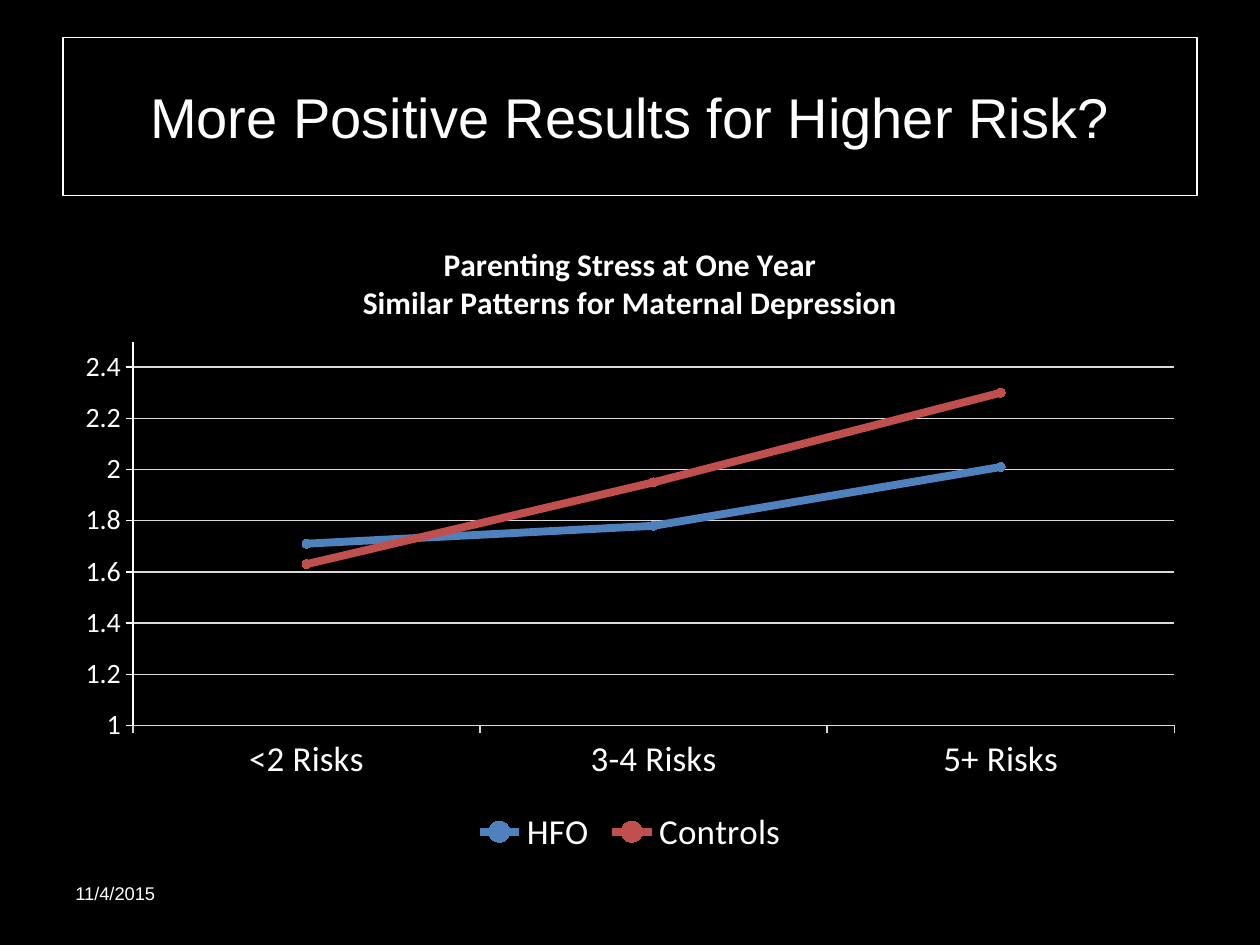
from pptx import Presentation
from pptx.chart.data import CategoryChartData
from pptx.dml.color import RGBColor
from pptx.enum.chart import XL_CHART_TYPE, XL_LEGEND_POSITION, XL_MARKER_STYLE, XL_TICK_MARK
from pptx.enum.text import MSO_ANCHOR, PP_ALIGN
from pptx.util import Inches, Pt

BLACK = RGBColor(0x00, 0x00, 0x00)
WHITE = RGBColor(0xFF, 0xFF, 0xFF)
GRAY = RGBColor(0xD9, 0xD9, 0xD9)
BLUE = RGBColor(0x4F, 0x81, 0xBD)
RED = RGBColor(0xC0, 0x50, 0x4D)


def format_font(font, size, name="Calibri", bold=False):
    font.name = name
    font.size = Pt(size)
    font.bold = bold
    font.color.rgb = WHITE


presentation = Presentation()
presentation.slide_width = Inches(10)
presentation.slide_height = Inches(7.5)
slide = presentation.slides.add_slide(presentation.slide_layouts[5])
slide.background.fill.solid()
slide.background.fill.fore_color.rgb = BLACK

title = slide.shapes.title
title.left, title.top = Inches(0.5), Inches(0.3)
title.width, title.height = Inches(9), Inches(1.25)
title.line.color.rgb = WHITE
title.line.width = Pt(0.75)
title.text_frame.text = "More Positive Results for Higher Risk?"
title.text_frame.vertical_anchor = MSO_ANCHOR.MIDDLE
title_paragraph = title.text_frame.paragraphs[0]
title_paragraph.alignment = PP_ALIGN.CENTER
format_font(title_paragraph.runs[0].font, 32, name="Arial")

chart_data = CategoryChartData()
chart_data.categories = ["<2 Risks", "3-4 Risks", "5+ Risks"]
chart_data.add_series("HFO", [1.71, 1.78, 2.01])
chart_data.add_series("Controls", [1.63, 1.95, 2.3])
chart = slide.shapes.add_chart(
    XL_CHART_TYPE.LINE_MARKERS,
    Inches(0.5), Inches(1.75), Inches(9), Inches(5.08),
    chart_data,
).chart
format_font(chart.font, 10)

chart_title = chart.chart_title.text_frame
chart_title.text = "Parenting Stress at One Year\nSimilar Patterns for Maternal Depression"
for paragraph in chart_title.paragraphs:
    format_font(paragraph.runs[0].font, 18, bold=True)
chart.chart_title.include_in_layout = False

chart.has_legend = True
chart.legend.position = XL_LEGEND_POSITION.BOTTOM
chart.legend.include_in_layout = False
format_font(chart.legend.font, 20)

category_axis = chart.category_axis
value_axis = chart.value_axis
for axis, size, color in [(category_axis, 20, GRAY), (value_axis, 16, WHITE)]:
    format_font(axis.tick_labels.font, size)
    axis.major_tick_mark = XL_TICK_MARK.OUTSIDE
    axis.minor_tick_mark = XL_TICK_MARK.NONE
    axis.format.line.color.rgb = color
    axis.format.line.width = Pt(0.75)

value_axis.minimum_scale = 1
value_axis.maximum_scale = 2.5
value_axis.major_unit = 0.2
value_axis.has_major_gridlines = True
value_axis.major_gridlines.format.line.color.rgb = GRAY
value_axis.major_gridlines.format.line.width = Pt(0.75)

for series, color in zip(chart.plots[0].series, [BLUE, RED]):
    series.smooth = False
    series.format.line.color.rgb = color
    series.format.line.width = Pt(4.5)
    series.marker.style = XL_MARKER_STYLE.CIRCLE
    series.marker.size = 5
    series.marker.format.fill.solid()
    series.marker.format.fill.fore_color.rgb = color
    series.marker.format.line.color.rgb = color

date_box = slide.shapes.add_textbox(Inches(0.5), Inches(6.95), Inches(2.33), Inches(0.4))
date_box.text_frame.word_wrap = True
date_box.text_frame.text = "11/4/2015"
format_font(date_box.text_frame.paragraphs[0].runs[0].font, 10.5, name="Arial")

presentation.save("out.pptx")
